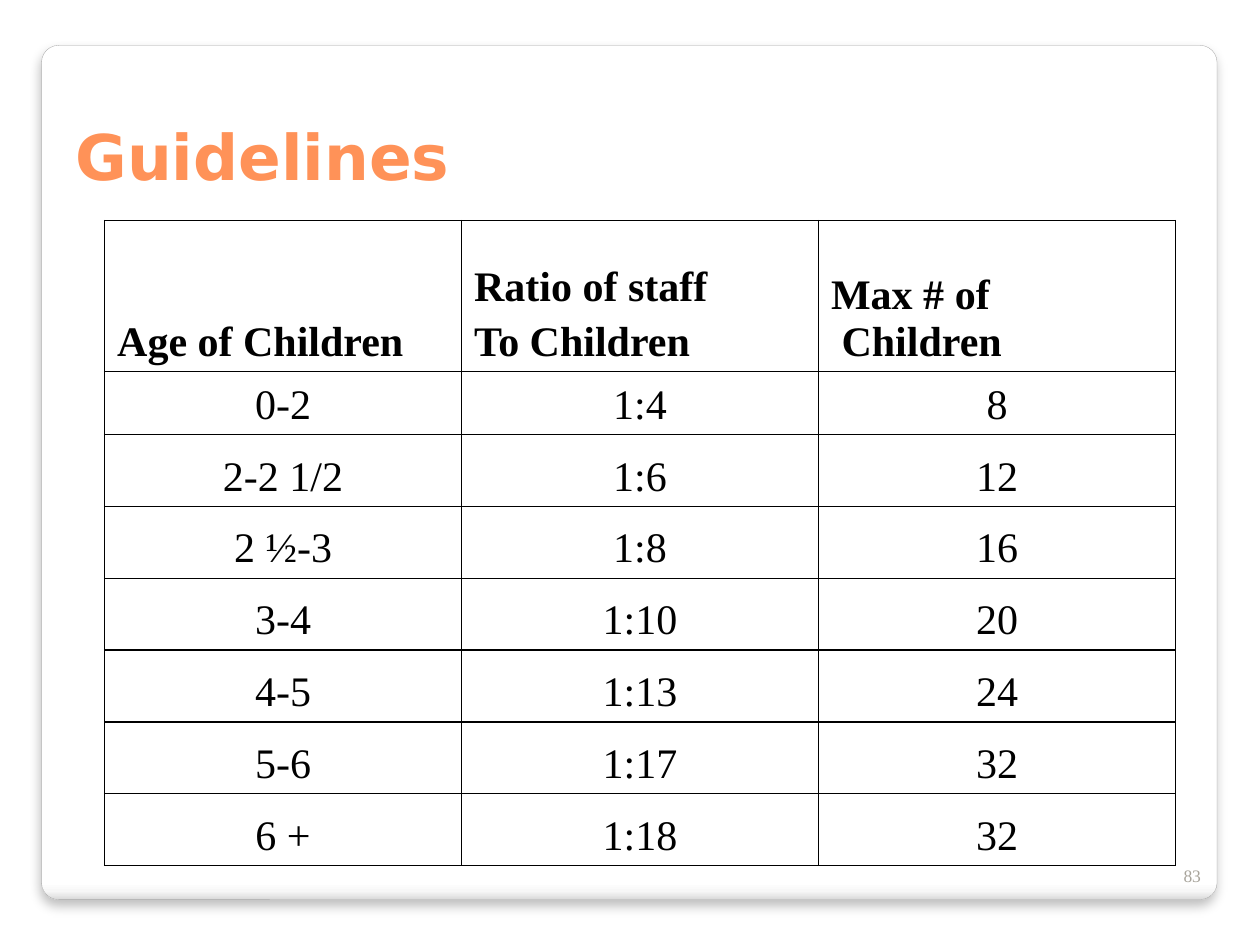
from dataclasses import dataclass

from lxml.etree import SubElement as Sub
from pptx import Presentation
from pptx.dml.color import RGBColor as Rgb
from pptx.enum.shapes import MSO_SHAPE as Shape
from pptx.enum.text import MSO_ANCHOR as Anchor, PP_ALIGN as Align
from pptx.oxml.ns import qn
from pptx.util import Inches, Pt


@dataclass(frozen=True)
class Theme:
    """Colours, fonts and type sizes of the slide."""
    ink: str = "000000"
    accent: str = "FF9258"
    muted: str = "A8A49B"
    edge: str = "A4A4A4"
    fade: tuple = ((0, "FFFFFF"), (98, "FFFFFF"), (99, "F7F7F7"), (100, "DADADA"))
    head: str = "DejaVu Sans"
    body: str = "Times New Roman"
    title: int = 36
    cell: int = 24
    small: int = 10


THEME = Theme()
ROWS = [
    ("Age of Children", "Ratio of staff\nTo Children", "Max # of\v Children"),
    ("0-2", "1:4", "8"),
    ("2-2 1/2", "1:6", "12"),
    ("2 ½-3", "1:8", "16"),
    ("3-4", "1:10", "20"),
    ("4-5", "1:13", "24"),
    ("5-6", "1:17", "32"),
    ("6 +", "1:18", "32"),
]


def write(frame, text, font=THEME.body, size=THEME.cell, color=THEME.ink,
          bold=False, align=Align.LEFT, before=0):
    """Fill a text frame, one paragraph to a line."""
    frame.word_wrap = True
    frame.text = text
    for para in frame.paragraphs:
        para.alignment = align
        para.space_before = Pt(before)
        for run in para.runs:
            run.font.name = font
            run.font.size = Pt(size)
            run.font.bold = bold
            run.font.color.rgb = Rgb.from_string(color)


def add_text(slide, box, text, **style):
    """Add a text box whose text sits at the bottom."""
    frame = slide.shapes.add_textbox(*map(Inches, box)).text_frame
    write(frame, text, **style)
    frame.vertical_anchor = Anchor.BOTTOM


def add_tint(parent, color):
    """Add a colour element and return it."""
    return Sub(parent, qn("a:srgbClr"), val=color)


def add_panel(slide, box):
    """Add the rounded panel with its fade and soft shadow."""
    panel = slide.shapes.add_shape(Shape.ROUNDED_RECTANGLE, *map(Inches, box))
    panel.adjustments[0] = 0.02
    panel.line.color.rgb = Rgb.from_string(THEME.edge)
    panel.line.width = Pt(0.16)
    panel.fill.gradient()
    panel.fill.gradient_angle = 270
    panel.shadow.inherit = False
    props = panel._element.spPr
    stops = props.find(".//" + qn("a:gsLst"))
    for stop in list(stops):
        stops.remove(stop)
    for pos, color in THEME.fade:
        add_tint(Sub(stops, qn("a:gs"), pos=str(pos * 1000)), color)
    shade = Sub(props.find(qn("a:effectLst")), qn("a:outerShdw"),
                blurRad=str(Pt(6)), dist=str(Pt(4)), dir="5400000",
                algn="t", rotWithShape="0")
    Sub(add_tint(shade, THEME.ink), qn("a:alpha"), val="25000")


def add_rules(cell):
    """Draw a thin line on each side of a cell."""
    props = cell._tc.get_or_add_tcPr()
    for side in "LRTB":
        line = Sub(props, qn(f"a:ln{side}"), w=str(Pt(1)))
        add_tint(Sub(line, qn("a:solidFill")), THEME.ink)


def add_grid(slide, box, rows, highs):
    """Add the ruled table with a bold first row."""
    shape = slide.shapes.add_table(len(rows), len(rows[0]), *map(Inches, box))
    table = shape.table
    table.first_row = table.horz_banding = False
    for i, (row, high) in enumerate(zip(rows, highs)):
        table.rows[i].height = Inches(high)
        for j, text in enumerate(row):
            cell = table.cell(i, j)
            add_rules(cell)
            cell.fill.background()
            cell.vertical_anchor = Anchor.BOTTOM
            write(cell.text_frame, text, bold=i == 0, before=5,
                  align=Align.CENTER if i else Align.LEFT)


def main():
    """Build and save the slide."""
    deck = Presentation()
    deck.slide_width, deck.slide_height = Inches(10), Inches(7.5)
    slide = deck.slides.add_slide(deck.slide_layouts[6])
    add_panel(slide, (0.33, 0.36, 9.33, 6.78))
    add_text(slide, (9.13, 6.68, 0.5, 0.4), "83", size=THEME.small,
             color=THEME.muted, align=Align.RIGHT)
    add_text(slide, (0.5, 0.33, 8.5, 1.25), "Guidelines", font=THEME.head,
             size=THEME.title, color=THEME.accent, bold=True)
    add_grid(slide, (0.83, 1.75, 8.5, 5.1), ROWS, [1.2, 0.5] + [0.57] * 6)
    deck.save("out.pptx")


if __name__ == "__main__":
    main()
